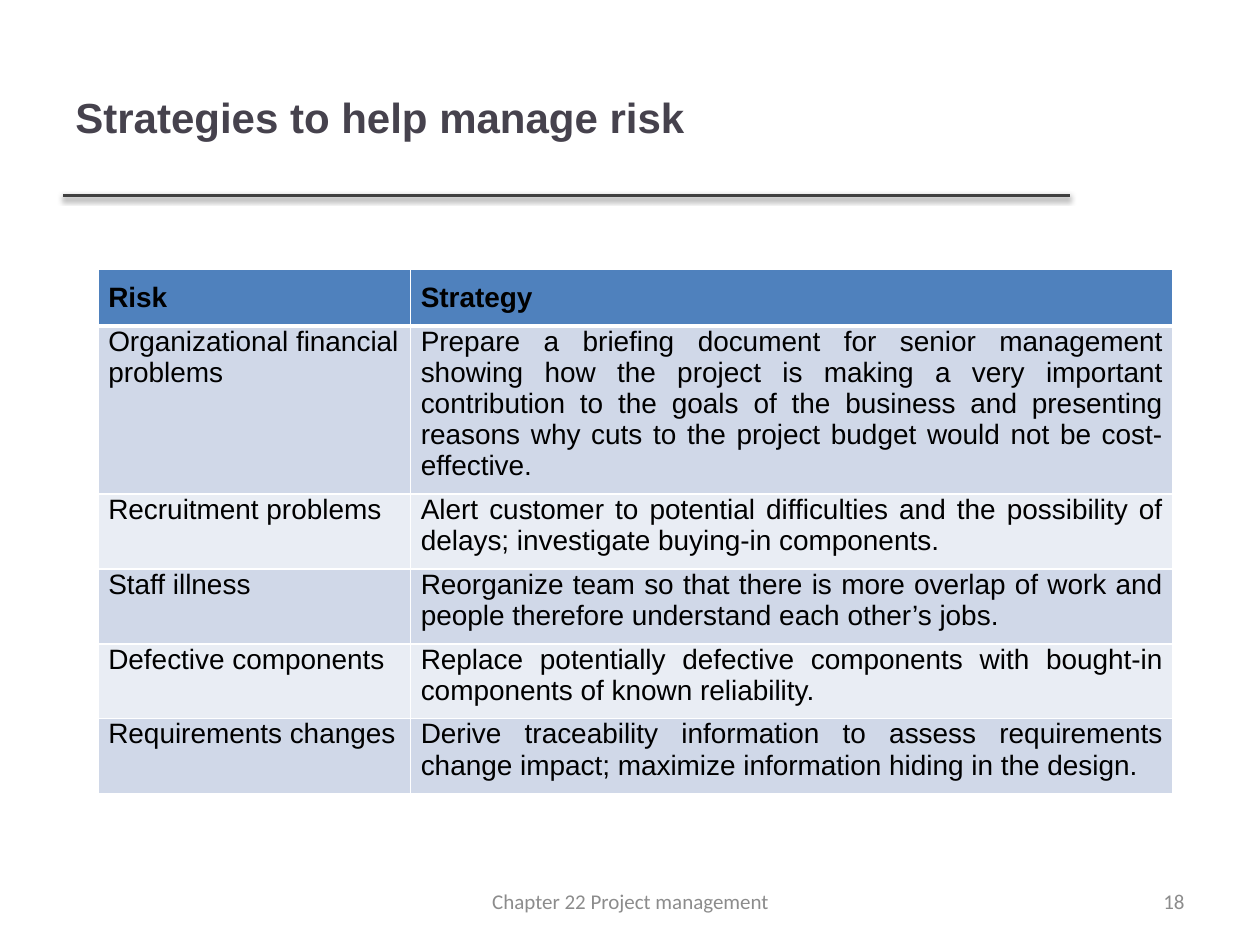
from typing import NamedTuple

import pptx
import pptx.dml.color
import pptx.enum.shapes
import pptx.enum.text
import pptx.oxml
import pptx.oxml.ns
import pptx.util
from pptx.dml.color import RGBColor
from pptx.enum.text import MSO_ANCHOR, PP_ALIGN
from pptx.util import Inches

TITLE = RGBColor(0x46, 0x42, 0x4D)
RULE = RGBColor(0x40, 0x40, 0x40)
BLACK = RGBColor(0x00, 0x00, 0x00)
GREY = RGBColor(0x8C, 0x8C, 0x8C)
HEADER = RGBColor(0x4F, 0x81, 0xBD)
BANDS = (RGBColor(0xD0, 0xD8, 0xE8), RGBColor(0xE9, 0xED, 0xF4))
NS = pptx.oxml.ns.nsdecls("a")


class Label(NamedTuple):
    text: str
    box: tuple[float, float, float, float]
    fmt: dict


class Risk(NamedTuple):
    name: str
    strategy: str


FOOTER = dict(size=12, font="Calibri", color=GREY)
LABELS = [
    Label("Strategies to help manage risk", (0.5, 0.3, 7.98, 1.25),
          dict(size=24, color=TITLE, bold=True)),
    Label("18", (7.17, 6.95, 2.33, 0.4), dict(FOOTER, align=PP_ALIGN.RIGHT)),
    Label("Chapter 22 Project management", (3.42, 6.95, 3.17, 0.4),
          dict(FOOTER, align=PP_ALIGN.CENTER)),
]
ROWS = [
    Risk("Risk", "Strategy"),
    Risk("Organizational financial problems",
         "Prepare a briefing document for senior management showing how the "
         "project is making a very important contribution to the goals of the "
         "business and presenting reasons why cuts to the project budget would "
         "not be cost-effective."),
    Risk("Recruitment problems",
         "Alert customer to potential difficulties and the possibility of "
         "delays; investigate buying-in components."),
    Risk("Staff illness",
         "Reorganize team so that there is more overlap of work and people "
         "therefore understand each other’s jobs."),
    Risk("Defective components",
         "Replace potentially defective components with bought-in components "
         "of known reliability."),
    Risk("Requirements changes",
         "Derive traceability information to assess requirements change "
         "impact; maximize information hiding in the design."),
]
COLUMNS = (2.48, 6.05)
ROW_HEIGHT = 0.41


def write_text(tf, text: str, *, size: float = 16, font: str = "Arial",
               color: RGBColor = BLACK, bold: bool = False,
               align: PP_ALIGN = PP_ALIGN.LEFT) -> None:
    tf.word_wrap = True
    p = tf.paragraphs[0]
    p.alignment = align
    r = p.add_run()
    r.text = text
    r.font.size = pptx.util.Pt(size)
    r.font.name = font
    r.font.bold = bold
    r.font.color.rgb = color


def add_label(s, label: Label) -> None:
    sp = s.shapes.add_textbox(*map(Inches, label.box))
    sp.text_frame.vertical_anchor = MSO_ANCHOR.MIDDLE
    write_text(sp.text_frame, label.text, **label.fmt)


def add_rule(s) -> None:
    """Draw the line under the title with its soft shadow."""
    line = s.shapes.add_connector(
        pptx.enum.shapes.MSO_CONNECTOR.STRAIGHT,
        Inches(0.5), Inches(1.55), Inches(8.49), Inches(1.55))
    line.line.color.rgb = RULE
    line.line.width = pptx.util.Pt(2)
    line._element.spPr.append(pptx.oxml.parse_xml(
        f'<a:effectLst {NS}><a:outerShdw blurRad="39370" dist="20320" '
        'dir="5400000" rotWithShape="0"><a:srgbClr val="000000">'
        '<a:alpha val="38000"/></a:srgbClr></a:outerShdw></a:effectLst>'))


def set_borders(cell, top: int, bottom: int) -> None:
    """Give the cell white borders; widths are in points."""
    tc_pr = cell._tc.get_or_add_tcPr()
    sides = (("L", 1), ("R", 1), ("T", top), ("B", bottom))
    for i, (side, width) in enumerate(sides):
        tc_pr.insert(i, pptx.oxml.parse_xml(
            f'<a:ln{side} {NS} w="{pptx.util.Pt(width)}"><a:solidFill>'
            f'<a:srgbClr val="FFFFFF"/></a:solidFill></a:ln{side}>'))


def add_risk_table(s) -> None:
    table = s.shapes.add_table(
        len(ROWS), len(COLUMNS), Inches(0.78), Inches(2.14),
        Inches(sum(COLUMNS)), Inches(ROW_HEIGHT * len(ROWS))).table
    for column, width in zip(table.columns, COLUMNS):
        column.width = Inches(width)
    for i, row in enumerate(ROWS):
        table.rows[i].height = Inches(ROW_HEIGHT)
        is_header = i == 0
        for j, text in enumerate(row):
            cell = table.cell(i, j)
            cell.margin_left = cell.margin_right = Inches(0.08)
            cell.margin_top = Inches(0.1 if is_header else 0)
            cell.margin_bottom = Inches(0.1)
            cell.fill.solid()
            cell.fill.fore_color.rgb = HEADER if is_header else BANDS[(i - 1) % 2]
            set_borders(cell, top=3 if i == 1 else 1, bottom=3 if is_header else 1)
            justified = is_header or j == 1
            write_text(cell.text_frame, text, bold=is_header,
                       align=PP_ALIGN.JUSTIFY if justified else PP_ALIGN.LEFT)


def main() -> None:
    prs = pptx.Presentation()
    prs.slide_width, prs.slide_height = Inches(10), Inches(7.5)
    s = prs.slides.add_slide(prs.slide_layouts[6])
    add_rule(s)
    add_risk_table(s)
    for label in LABELS:
        add_label(s, label)
    prs.save("out.pptx")


if __name__ == "__main__":
    main()
